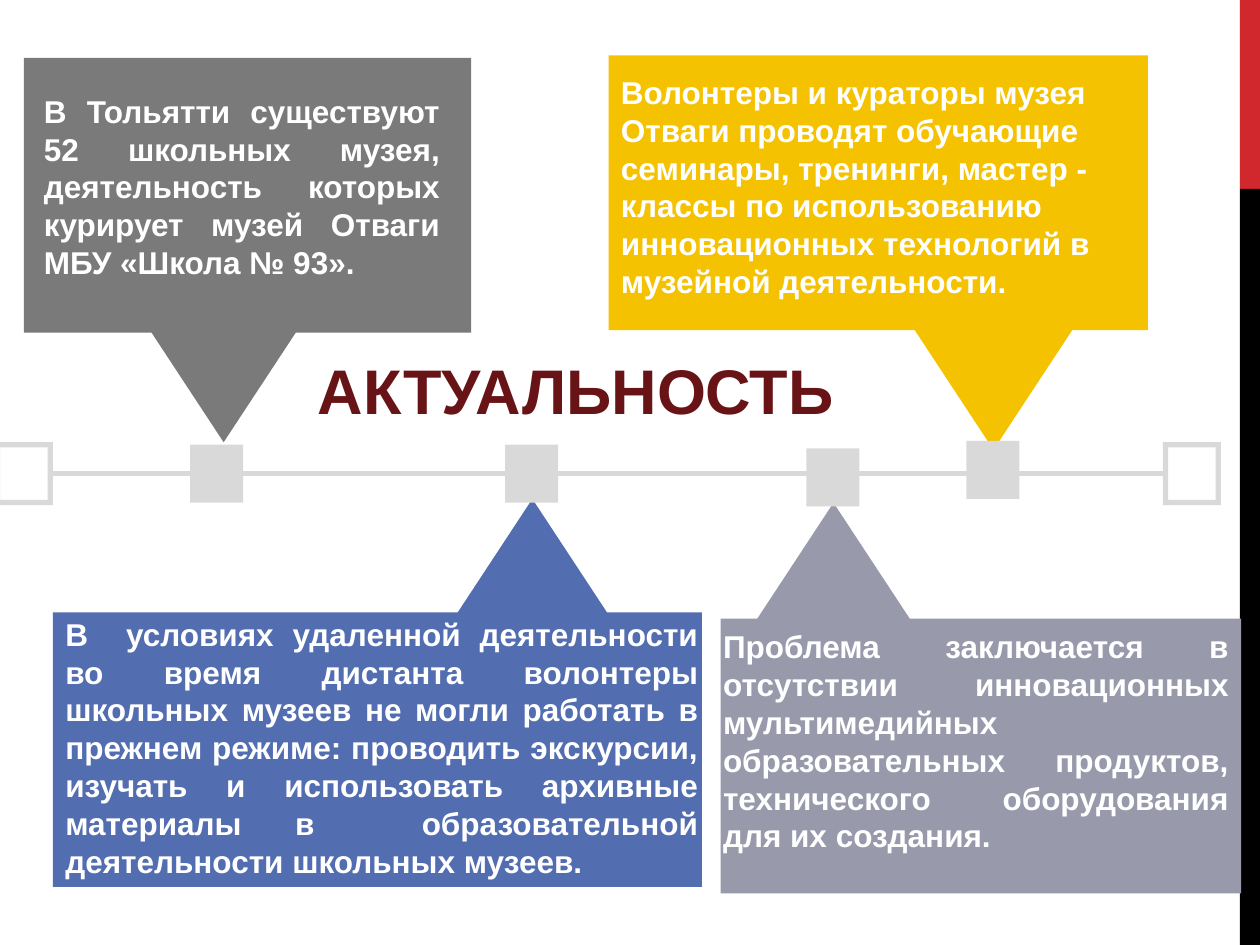
"""Build the timeline slide with four callouts around a central title."""
from lxml.etree import SubElement
from pptx import Presentation
from pptx.dml.color import RGBColor
from pptx.enum.shapes import MSO_CONNECTOR, MSO_SHAPE
from pptx.enum.text import MSO_ANCHOR, PP_ALIGN
from pptx.oxml.ns import qn
from pptx.util import Inches, Pt

RED = RGBColor(0xD1, 0x28, 0x2E)
BLACK = RGBColor(0, 0, 0)
WHITE = RGBColor(0xFF, 0xFF, 0xFF)
MAROON = RGBColor(0x68, 0x14, 0x17)
SILVER = RGBColor(0xD9, 0xD9, 0xD9)
GREY = RGBColor(0x7A, 0x7A, 0x7A)
GOLD = RGBColor(0xF5, 0xC2, 0x01)
BLUE = RGBColor(0x52, 0x6D, 0xB0)
SLATE = RGBColor(0x98, 0x9A, 0xAC)

DOWN = MSO_SHAPE.FLOWCHART_MERGE
UP = MSO_SHAPE.ISOSCELES_TRIANGLE
LEFT, JUST = PP_ALIGN.LEFT, PP_ALIGN.JUSTIFY

CARDS = [
    (GREY, (0.19, 0.46, 3.55, 2.18), DOWN, (1.15, 2.56), (0.25, 0.68, 3.34, 1.62), JUST,
     "В Тольятти существуют 52 школьных музея, деятельность которых "
     "курирует музей Отваги МБУ «Школа № 93»."),
    (GOLD, (4.83, 0.44, 4.28, 2.18), DOWN, (7.26, 2.62), (4.83, 0.53, 4.21, 1.92), LEFT,
     "Волонтеры и кураторы музея Отваги проводят обучающие семинары, тренинги, "
     "мастер - классы по использованию инновационных технологий в музейной деятельности."),
    (BLUE, (0.42, 4.86, 5.15, 2.18), UP, (3.6, 3.96), (0.42, 4.83, 5.22, 2.22), JUST,
     "В  условиях удаленной деятельности во время дистанта волонтеры школьных музеев "
     "не могли работать в прежнем режиме: проводить экскурсии, изучать и использовать "
     "архивные материалы в  образовательной деятельности школьных музеев."),
    (SLATE, (5.72, 4.91, 4.13, 2.18), UP, (5.99, 3.99), (5.64, 4.93, 4.21, 1.92), JUST,
     "Проблема заключается в отсутствии инновационных мультимедийных образовательных "
     "продуктов, технического оборудования для их создания."),
]
NODES = [(1.51, 3.53), (4.01, 3.53), (6.4, 3.56), (7.67, 3.5)]


def write(frame, text, size=18, color=WHITE, align=LEFT, wrap=True):
    frame.word_wrap = wrap
    frame.vertical_anchor = MSO_ANCHOR.TOP
    para = frame.paragraphs[0]
    para.alignment = align
    para.line_spacing = 1.0
    run = para.add_run()
    run.text = text
    run.font.name = "Arial"
    run.font.size = Pt(size)
    run.font.bold = True
    run.font.color.rgb = color


class Deck:
    def __init__(self):
        self.show = Presentation()
        self.show.slide_width = Inches(10)
        self.show.slide_height = Inches(7.5)
        self.slide = self.show.slides.add_slide(self.show.slide_layouts[5])

    def block(self, box, color, kind=MSO_SHAPE.RECTANGLE):
        shape = self.slide.shapes.add_shape(kind, *map(Inches, box))
        shape.shadow.inherit = False
        shape.fill.solid()
        shape.fill.fore_color.rgb = color
        shape.line.fill.background()
        return shape

    def frame(self, left):
        shape = self.block((left, 3.51, 0.46, 0.5), SILVER, MSO_SHAPE.FRAME)
        shape.adjustments[0] = 0.09
        return shape

    def link(self, start, end):
        line = self.slide.shapes.add_connector(MSO_CONNECTOR.STRAIGHT, 0, 0, 0, 0)
        line.begin_connect(start, 3)
        line.end_connect(end, 1)
        line.line.color.rgb = SILVER
        line.line.width = Pt(3)
        SubElement(line._element.spPr, qn("a:effectLst"))

    def label(self, box, text, **style):
        area = self.slide.shapes.add_textbox(*map(Inches, box))
        write(area.text_frame, text, **style)

    def title(self, box, text, **style):
        head = self.slide.shapes.title
        head.left, head.top, head.width, head.height = map(Inches, box)
        write(head.text_frame, text, **style)


def main():
    deck = Deck()
    deck.block((9.84, 0, 0.16, 1.5), RED)
    deck.block((9.84, 1.5, 0.16, 6), BLACK)
    deck.link(deck.frame(-0.04), deck.frame(9.23))
    for color, box, kind, tip, area, align, text in CARDS:
        deck.block(box, color)
        deck.block((*tip, 1.25, 0.95), color, kind)
        deck.label(area, text, align=align)
    for node in NODES:
        deck.block((*node, 0.42, 0.46), SILVER)
    deck.title((2.4, 2.74, 4.34, 0.71), "АКТУАЛЬНОСТЬ", size=36, color=MAROON,
               align=PP_ALIGN.CENTER, wrap=False)
    deck.show.save("out.pptx")


if __name__ == "__main__":
    main()
